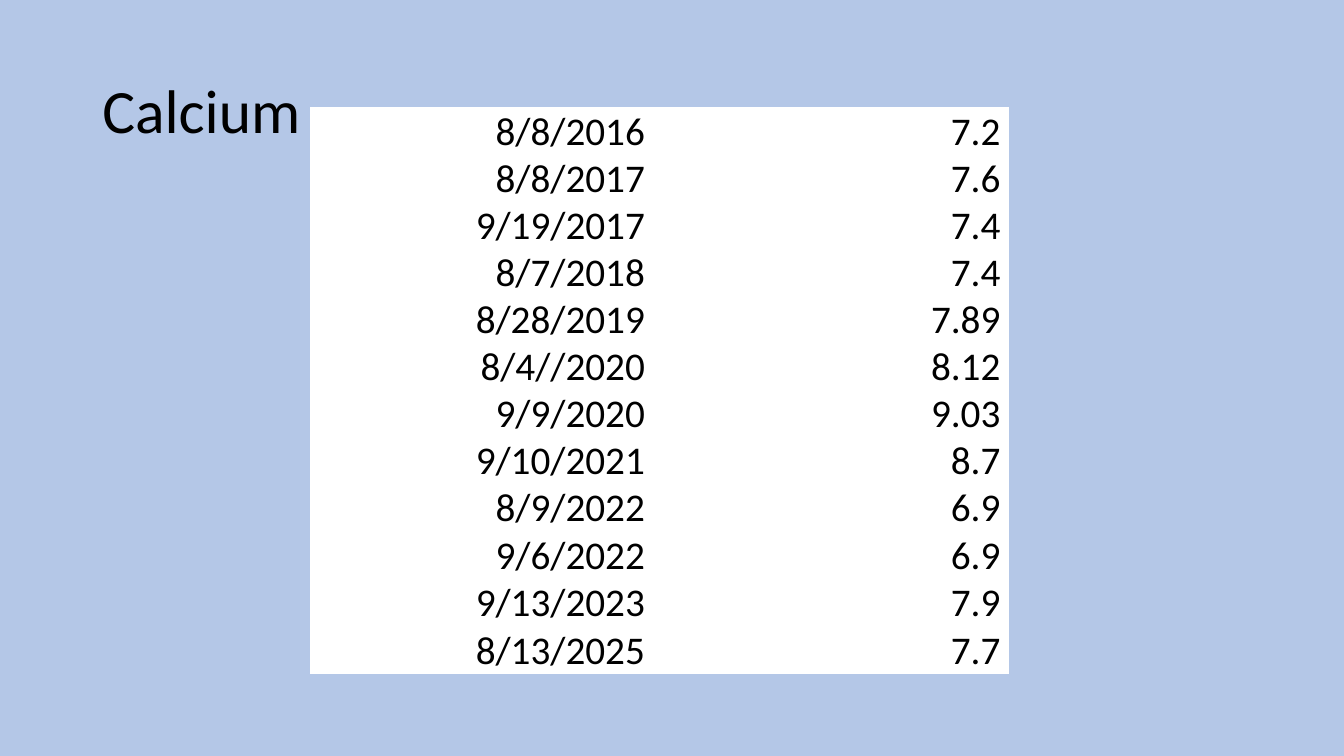
"""Build the slide that lists calcium readings by date."""
from pptx import Presentation
from pptx.dml.color import RGBColor
from pptx.enum.text import MSO_ANCHOR, PP_ALIGN
from pptx.util import Pt


def color(hex_code):
    return RGBColor.from_string(hex_code)


def write(paragraph, text, size):
    run = paragraph.add_run()
    run.text = text
    run.font.size = Pt(size)
    run.font.name = "Calibri"
    run.font.color.rgb = color("000000")


READINGS = [
    (["8/8/2016"], ["7.2"]),
    (["8/8/2017"], ["7.6"]),
    (["9/19/2017"], ["7.4"]),
    (["8/7/2018"], ["7.4"]),
    (["8/28/2019"], ["7.89"]),
    (["8/4//2020"], ["8.12"]),
    (["9/9/2020"], ["9.03"]),
    (["9/10/2021"], ["8.7"]),
    (["8/9/2022"], ["6.9"]),
    (["9/6/2022"], ["6.9"]),
    (["9/13/2023", "8/13/2025"], ["7.9", "7.7"]),
]
MIDDLE_DATES = 7
LINE_HEIGHT = 29.5

prs = Presentation()
prs.slide_width, prs.slide_height = Pt(960), Pt(540)
slide = prs.slides.add_slide(prs.slide_layouts[6])
slide.background.fill.solid()
slide.background.fill.fore_color.rgb = color("B4C7E7")

heading = slide.shapes.add_textbox(Pt(66), Pt(28.75), Pt(828), Pt(104.4)).text_frame
heading.word_wrap = True
heading.vertical_anchor = MSO_ANCHOR.MIDDLE
heading.paragraphs[0].line_spacing = 0.9
write(heading.paragraphs[0], "Calcium", 44)

readings_frame = slide.shapes.add_table(
    len(READINGS), 2, Pt(222), Pt(77), Pt(498), Pt(403))
readings = readings_frame.table
readings.first_row = False
readings.horz_banding = False
readings.columns[0].width = Pt(244)
readings.columns[1].width = Pt(254)

for row, reading in enumerate(READINGS):
    readings.rows[row].height = Pt(LINE_HEIGHT * len(reading[0]))
    for column, lines in enumerate(reading):
        cell = readings.cell(row, column)
        cell.fill.solid()
        cell.fill.fore_color.rgb = color("FFFFFF")
        cell.margin_left = cell.margin_right = Pt(5.4)
        cell.margin_top = cell.margin_bottom = Pt(0)
        is_middle = column == 0 and row < MIDDLE_DATES
        cell.vertical_anchor = MSO_ANCHOR.MIDDLE if is_middle else MSO_ANCHOR.BOTTOM
        for index, line in enumerate(lines):
            text = cell.text_frame
            paragraph = text.add_paragraph() if index else text.paragraphs[0]
            paragraph.alignment = PP_ALIGN.RIGHT
            write(paragraph, line, 28)

readings_frame.height = Pt(403)
prs.save("out.pptx")
